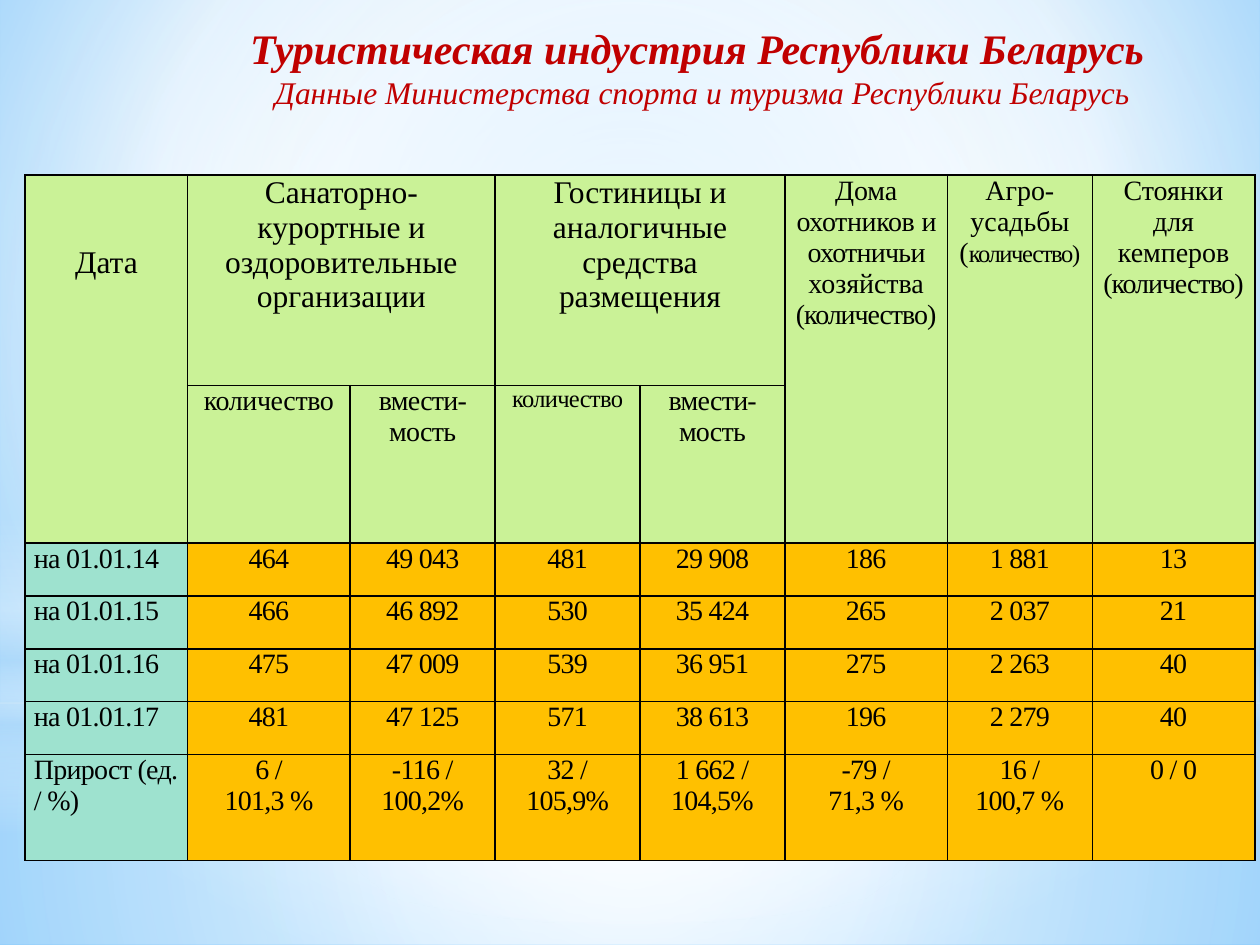
from lxml import etree
from pptx import Presentation
from pptx.dml.color import RGBColor
from pptx.enum.shapes import MSO_SHAPE
from pptx.enum.text import PP_ALIGN
from pptx.oxml import parse_xml
from pptx.oxml.ns import nsdecls, qn
from pptx.util import Inches, Pt

COLORS = {
    "text": "000000", "title": "C00000", "header": "CAF297",
    "date": "9EE2CF", "value": "FFC000", "border": "000000",
    "white": "FFFFFF", "haze": "B4DCFA",
    "sky": "9ED5FF", "deep_sky": "5BB9FF",
}


class SlideBuilder:
    font = "Times New Roman"

    def __init__(self, slide):
        self.slide = slide

    def gradient(self, fill, owner, stops, center=None):
        """Stops are (position, colour, opacity); no center means top to bottom."""
        fill.gradient()
        grad = next(owner.iter(qn("a:gradFill")))
        for child in list(grad):
            grad.remove(child)
        stop_xml = "".join(
            f'<a:gs pos="{pos * 1000}"><a:srgbClr val="{COLORS[color]}">'
            f'<a:alpha val="{opacity * 1000}"/></a:srgbClr></a:gs>'
            for pos, color, opacity in stops)
        grad.append(parse_xml(f'<a:gsLst {nsdecls("a")}>{stop_xml}</a:gsLst>'))
        if center:
            sides = " ".join(f'{s}="{v * 1000}"' for s, v in zip("ltrb", center))
            shading = (f'<a:path {nsdecls("a")} path="circle">'
                       f'<a:fillToRect {sides}/></a:path>')
        else:
            shading = f'<a:lin {nsdecls("a")} ang="5400000" scaled="0"/>'
        grad.append(parse_xml(shading))

    def background(self, stops, center):
        self.gradient(self.slide.background.fill, self.slide._element, stops, center)

    def glow(self, kind, top, height, stops, center=None):
        shape = self.slide.shapes.add_shape(
            kind, 0, Inches(top), Inches(10), Inches(height))
        shape.shadow.inherit = False
        shape.line.fill.background()
        self.gradient(shape.fill, shape._element, stops, center)

    def run(self, paragraph, text, size, color="text", spacing=0, bold=False, italic=False):
        run = paragraph.add_run()
        run.text = text
        font = run.font
        font.name, font.size = self.font, Pt(size)
        font.bold, font.italic = bold, italic
        font.color.rgb = RGBColor.from_string(COLORS[color])
        if spacing:
            run._r.get_or_add_rPr().set("spc", str(round(spacing * 100)))

    def heading(self, left, top, width, height, lines):
        frame = self.slide.shapes.add_textbox(
            Inches(left), Inches(top), Inches(width), Inches(height)).text_frame
        frame.word_wrap = True
        for i, (text, size, bold) in enumerate(lines):
            paragraph = frame.add_paragraph() if i else frame.paragraphs[0]
            paragraph.alignment = PP_ALIGN.CENTER
            props = paragraph._p.get_or_add_pPr()
            props.set("marL", str(Inches(0.5)))
            props.set("indent", str(Inches(0.49)))
            self.run(paragraph, text, size, "title", bold=bold, italic=True)

    def table(self, left, top, widths, heights):
        table = self.slide.shapes.add_table(
            len(heights), len(widths), Inches(left), Inches(top),
            Inches(sum(widths)), Inches(sum(heights))).table
        table.first_row = table.horz_banding = False
        for column, width in zip(table.columns, widths):
            column.width = Inches(width)
        for row, height in zip(table.rows, heights):
            row.height = Inches(height)
        return table

    def border(self, cell):
        props = cell._tc.get_or_add_tcPr()
        for i, side in enumerate(("lnL", "lnR", "lnT", "lnB")):
            line = etree.Element(qn(f"a:{side}"), w=str(Pt(1)))
            solid = etree.SubElement(line, qn("a:solidFill"))
            etree.SubElement(solid, qn("a:srgbClr"), val=COLORS["border"])
            props.insert(i, line)

    def cell(self, cell, fill, paragraphs=(), align=PP_ALIGN.CENTER, top=0):
        """Each paragraph is a list of (text, size, spacing) runs."""
        cell.fill.solid()
        cell.fill.fore_color.rgb = RGBColor.from_string(COLORS[fill])
        cell.margin_left = cell.margin_right = Inches(0.07)
        cell.margin_top, cell.margin_bottom = Inches(top), 0
        self.border(cell)
        frame = cell.text_frame
        for i, runs in enumerate(paragraphs):
            paragraph = frame.add_paragraph() if i else frame.paragraphs[0]
            paragraph.alignment = align
            for text, size, spacing in runs:
                self.run(paragraph, text, size, spacing=spacing)


# Header cells: (row, column) -> (rows spanned, columns spanned, runs)
HEADERS = {
    (0, 0): (2, 1, [("Дата", 18, 0)]),
    (0, 1): (1, 2, [("Санаторно-курортные и оздоровительные организации", 18, 0)]),
    (0, 3): (1, 2, [("Гостиницы и аналогичные средства размещения", 18, 0)]),
    (0, 5): (2, 1, [("Дома ", 16, 0), ("охотников ", 16, -0.2), ("и охотничьи ", 16, -0.4),
                    ("хозяйства ", 16, 0), ("(количество)", 16, -0.6)]),
    (0, 6): (2, 1, [("Агро-усадьбы ", 16, 0), ("(", 16, -0.8), ("количество)", 14, -0.8)]),
    (0, 7): (2, 1, [("Стоянки для кемперов ", 16, 0), ("(количество)", 16, -0.6)]),
    (1, 1): (1, 1, [("количество", 16, -0.2)]),
    (1, 2): (1, 1, [("вмести-мость", 16, -0.4)]),
    (1, 3): (1, 1, [("количество", 14, -0.4)]),
    (1, 4): (1, 1, [("вмести-мость", 16, -0.4)]),
}
RECORDS = [
    ["на 01.01.14", "464", "49 043", "481", "29 908", "186", "1 881", "13"],
    ["на 01.01.15", "466", "46 892", "530", "35 424", "265", "2 037", "21"],
    ["на 01.01.16", "475", "47 009", "539", "36 951", "275", "2 263", "40"],
    ["на 01.01.17", "481", "47 125", "571", "38 613", "196", "2 279", "40"],
    ["Прирост (ед. / %)", "6 /\n101,3 %", "-116 /\n100,2%", "32 /\n105,9%",
     "1 662 /\n104,5%", "-79 /\n71,3 %", "16 /\n100,7 %", "0 / 0"],
]
WIDE, NARROW = 1.29, 1.15
WIDTHS = [WIDE, WIDE, NARROW, NARROW, NARROW, WIDE, NARROW, WIDE]
HEIGHTS = [1.67, 1.25] + [0.42] * 4 + [0.84]
MIDDLE = (50, 50, 50, 50)


def main():
    prs = Presentation()
    prs.slide_width, prs.slide_height = Inches(10), Inches(7.5)
    page = SlideBuilder(prs.slides.add_slide(prs.slide_layouts[6]))

    # Sky backdrop
    page.background([(0, "sky", 100), (60, "white", 100), (100, "deep_sky", 100)],
                    (20, 10, 20, 60))
    page.glow(MSO_SHAPE.RECTANGLE, 5.58, 1.92,
              [(0, "white", 91), (37, "white", 76), (100, "haze", 79)], MIDDLE)
    page.glow(MSO_SHAPE.RECTANGLE, 0, 5.58,
              [(0, "white", 89), (48, "white", 62), (100, "haze", 79)], MIDDLE)
    page.glow(MSO_SHAPE.RECTANGLE, 4.12, 2.5,
              [(0, "white", 0), (29, "white", 30), (45, "haze", 40),
               (55, "white", 26), (65, "haze", 60), (100, "white", 0)])
    page.glow(MSO_SHAPE.OVAL, 1.75, 5.58, [(0, "white", 100), (56, "white", 0)], MIDDLE)

    # Tourism table: header
    tourism = page.table(0.2, 1.39, WIDTHS, HEIGHTS)
    for row in range(2):
        for col in range(len(WIDTHS)):
            target = tourism.cell(row, col)
            if (row, col) not in HEADERS:
                page.cell(target, "header")
                continue
            rows, cols, runs = HEADERS[row, col]
            page.cell(target, "header", [runs], top=0 if col else 0.56)
            if rows * cols > 1:
                target.merge(tourism.cell(row + rows - 1, col + cols - 1))

    # Tourism table: yearly figures and growth
    for row, record in enumerate(RECORDS, start=2):
        for col, value in enumerate(record):
            lines = [[(line, 16, -0.4)] for line in value.split("\n")]
            page.cell(tourism.cell(row, col), "value" if col else "date", lines,
                      PP_ALIGN.CENTER if col else PP_ALIGN.LEFT)

    # Title and data source
    page.heading(0.75, 0.13, 8.66, 0.81, [
        ("Туристическая индустрия Республики Беларусь ", 24, True),
        ("Данные Министерства спорта и туризма Республики Беларусь", 18, False),
    ])

    prs.save("out.pptx")


if __name__ == "__main__":
    main()
